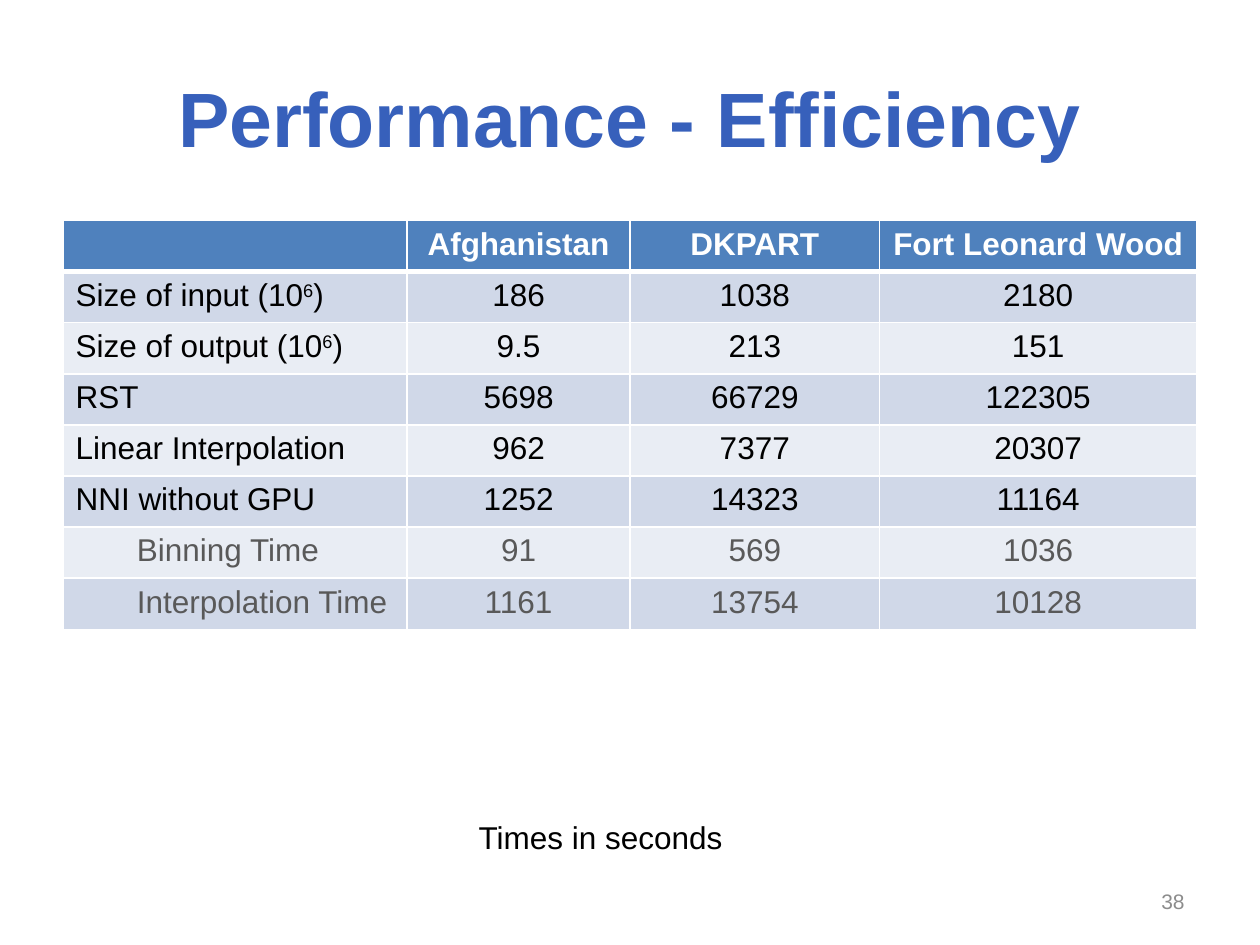
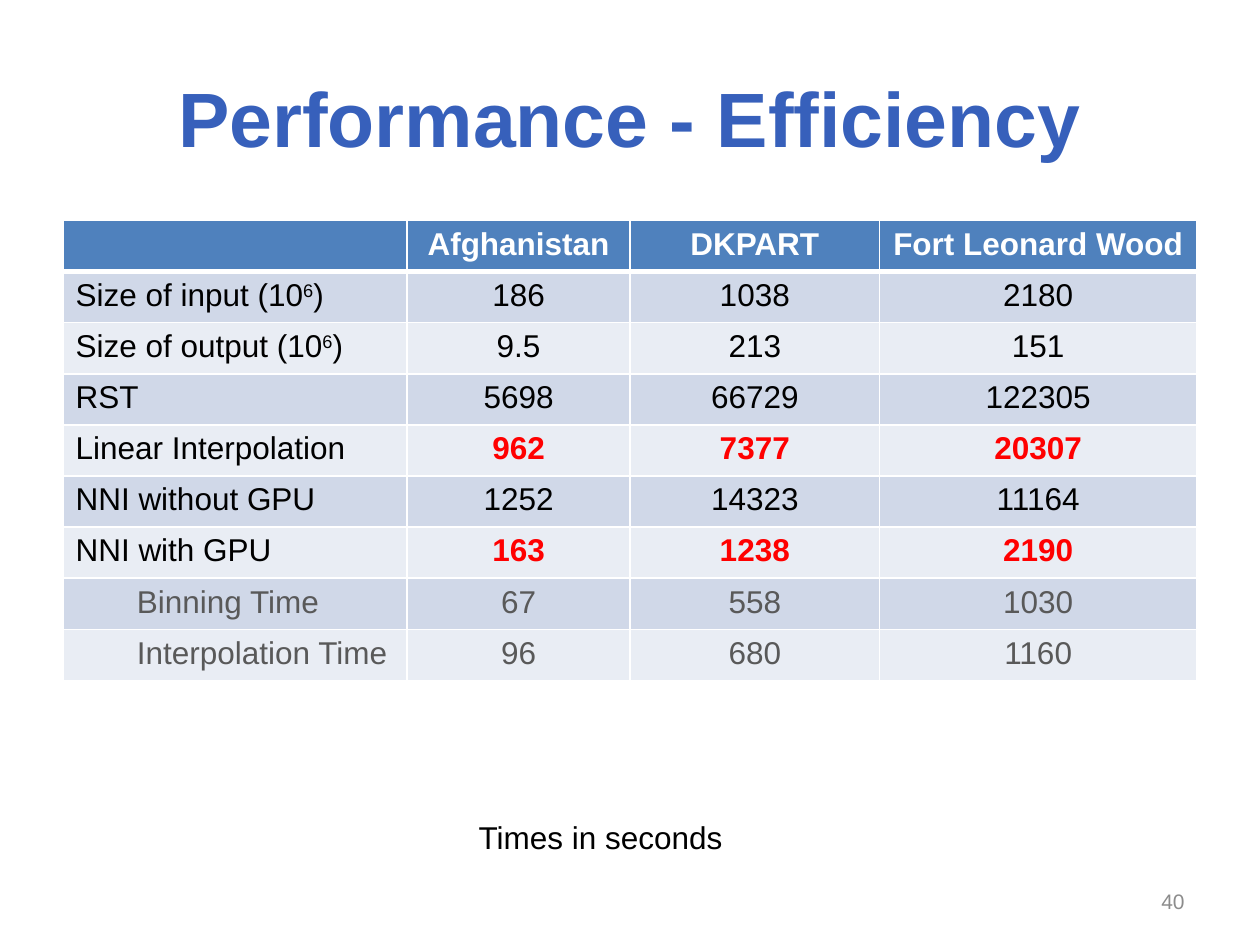
from dataclasses import dataclass

from lxml.etree import SubElement
from pptx import Presentation
from pptx.dml.color import RGBColor
from pptx.enum.text import MSO_ANCHOR, PP_ALIGN
from pptx.oxml.ns import qn
from pptx.util import Pt

# Shared look
FONT = "Arial"
TITLE_BLUE = RGBColor(0x37, 0x60, 0xBB)
HEADER_BLUE = RGBColor(0x4F, 0x81, 0xBD)
BANDS = (RGBColor(0xD0, 0xD8, 0xE8), RGBColor(0xE9, 0xED, 0xF4))
WHITE = RGBColor(0xFF, 0xFF, 0xFF)
BLACK = RGBColor(0, 0, 0)
RED = RGBColor(0xFF, 0, 0)
DETAIL_GRAY = RGBColor(0x59, 0x59, 0x59)
NUMBER_GRAY = RGBColor(0x8C, 0x8C, 0x8C)

# Table geometry in points
TABLE_LEFT, TABLE_TOP = 36, 126
COLUMN_WIDTHS = (196.6, 127.5, 142.5, 181.4)
ROW_HEIGHT = 29.2
CELL_MARGIN, DETAIL_INDENT = 7.2, 35


@dataclass(frozen=True)
class Row:
    label: str
    values: tuple[str, str, str]
    detail: bool = False
    highlight: bool = False


@dataclass(frozen=True)
class TimingSlide:
    number: int
    rows: tuple[Row, ...]


HEADINGS = ("", "Afghanistan", "DKPART", "Fort Leonard Wood")
SIZES_AND_RST = (
    Row("Size of input (10^6^)", ("186", "1038", "2180")),
    Row("Size of output (10^6^)", ("9.5", "213", "151")),
    Row("RST", ("5698", "66729", "122305")),
)
LINEAR = ("Linear Interpolation", ("962", "7377", "20307"))
WITHOUT_GPU = Row("NNI without GPU", ("1252", "14323", "11164"))

SLIDES = (
    TimingSlide(38, SIZES_AND_RST + (
        Row(*LINEAR),
        WITHOUT_GPU,
        Row("Binning Time", ("91", "569", "1036"), detail=True),
        Row("Interpolation Time", ("1161", "13754", "10128"), detail=True),
    )),
    TimingSlide(40, SIZES_AND_RST + (
        Row(*LINEAR, highlight=True),
        WITHOUT_GPU,
        Row("NNI with GPU", ("163", "1238", "2190"), highlight=True),
        Row("Binning Time", ("67", "558", "1030"), detail=True),
        Row("Interpolation Time", ("96", "680", "1160"), detail=True),
    )),
)


def write_text(text_frame, text: str, *, size: float = 18,
               color: RGBColor = BLACK, bold: bool = False,
               align: PP_ALIGN = PP_ALIGN.LEFT) -> None:
    """Write one paragraph; text between carets is superscript."""
    paragraph = text_frame.paragraphs[0]
    paragraph.alignment = align
    for index, part in enumerate(text.split("^")):
        run = paragraph.add_run()
        run.text = part
        run.font.name = FONT
        run.font.size = Pt(size)
        run.font.bold = bold
        run.font.color.rgb = color
        if index % 2:
            run.font._element.set("baseline", "30000")


def add_text(slide, left: float, top: float, width: float, height: float,
             text: str, *, anchor: MSO_ANCHOR = MSO_ANCHOR.MIDDLE,
             wrap: bool = True, **text_format) -> None:
    shape = slide.shapes.add_textbox(Pt(left), Pt(top), Pt(width), Pt(height))
    shape.text_frame.word_wrap = wrap
    shape.text_frame.vertical_anchor = anchor
    write_text(shape.text_frame, text, **text_format)


def set_borders(cell, top: float = 1, bottom: float = 1) -> None:
    properties = cell._tc.get_or_add_tcPr()
    widths = {"a:lnL": 1, "a:lnR": 1, "a:lnT": top, "a:lnB": bottom}
    for tag, width in widths.items():
        line = SubElement(properties, qn(tag), w=str(Pt(width)))
        fill = SubElement(line, qn("a:solidFill"))
        SubElement(fill, qn("a:srgbClr"), val=str(WHITE))


def fill_cell(cell, text: str, fill: RGBColor, *, indent: float = 0,
              top: float = 1, bottom: float = 1, **text_format) -> None:
    set_borders(cell, top, bottom)
    cell.fill.solid()
    cell.fill.fore_color.rgb = fill
    cell.margin_left = Pt(CELL_MARGIN + indent)
    write_text(cell.text_frame, text, **text_format)


def add_timing_table(slide, rows: tuple[Row, ...]) -> None:
    row_count = len(rows) + 1
    table = slide.shapes.add_table(
        row_count, len(HEADINGS), Pt(TABLE_LEFT), Pt(TABLE_TOP),
        Pt(sum(COLUMN_WIDTHS)), Pt(ROW_HEIGHT * row_count)).table
    for column, width in zip(table.columns, COLUMN_WIDTHS):
        column.width = Pt(width)
    for table_row in table.rows:
        table_row.height = Pt(ROW_HEIGHT)

    # Header row
    for column, heading in enumerate(HEADINGS):
        fill_cell(table.cell(0, column), heading, HEADER_BLUE, bottom=3,
                  color=WHITE, bold=True, align=PP_ALIGN.CENTER)

    # Banded body rows
    for index, row in enumerate(rows, start=1):
        band = BANDS[(index - 1) % 2]
        top = 3 if index == 1 else 1
        color = DETAIL_GRAY if row.detail else BLACK
        fill_cell(table.cell(index, 0), row.label, band, top=top, color=color,
                  indent=DETAIL_INDENT if row.detail else 0)
        for column, value in enumerate(row.values, start=1):
            fill_cell(table.cell(index, column), value, band, top=top,
                      color=RED if row.highlight else color,
                      bold=row.highlight, align=PP_ALIGN.CENTER)


def add_timing_slide(presentation, content: TimingSlide) -> None:
    slide = presentation.slides.add_slide(presentation.slide_layouts[6])
    add_text(slide, 36, 21.6, 648, 90, "Performance - Efficiency",
             size=44, color=TITLE_BLUE, bold=True, align=PP_ALIGN.CENTER)
    add_timing_table(slide, content.rows)
    add_text(slide, 516, 500.5, 168, 28.75, str(content.number),
             size=12, color=NUMBER_GRAY, align=PP_ALIGN.RIGHT)
    add_text(slide, 266.4, 463.7, 155.5, 29, "Times in seconds",
             anchor=MSO_ANCHOR.TOP, wrap=False)


def main() -> None:
    presentation = Presentation()
    presentation.slide_width = Pt(720)
    presentation.slide_height = Pt(540)
    for content in SLIDES:
        add_timing_slide(presentation, content)
    presentation.save("out.pptx")


if __name__ == "__main__":
    main()
